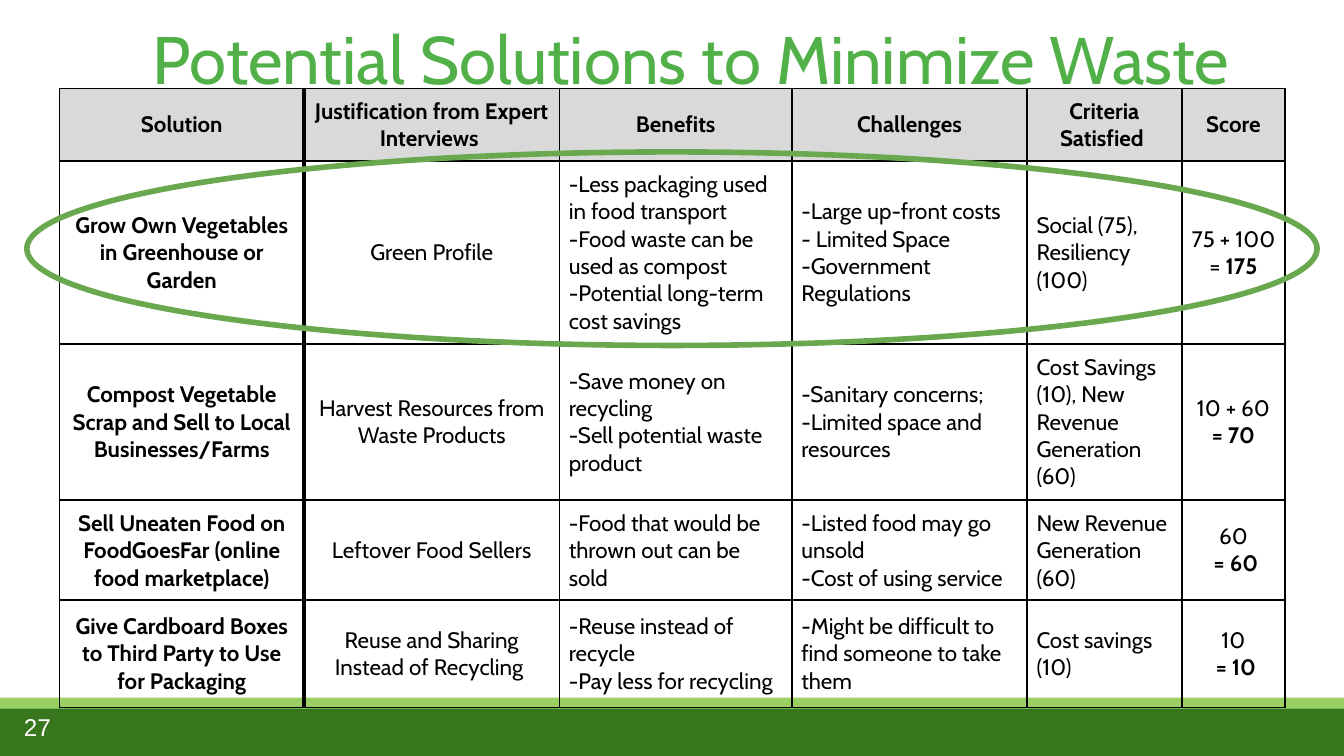
import collections

import pptx
import pptx.dml.color
import pptx.enum.shapes
import pptx.enum.text
import pptx.oxml
import pptx.oxml.ns
import pptx.util

Box = collections.namedtuple("Box", "left top width height")
SLIDE = Box(0, 0, pptx.util.Inches(10), pptx.util.Inches(10 * 9 / 16))
ALIGN = pptx.enum.text.PP_ALIGN
ANCHOR = pptx.enum.text.MSO_ANCHOR
SHAPE = pptx.enum.shapes.MSO_SHAPE

COLUMN_SHARES = [1.82, 1.9, 1.73, 1.75, 1.15, 0.77]
ROW_SHARES = [0.54, 1.36, 1.16, 0.74, 0.8]
LEFT_ALIGNED = {2, 3, 4}
HEADINGS = ["Solution", "Justification from Expert Interviews ", "Benefits",
            "Challenges", "Criteria Satisfied ", "Score"]
SOLUTIONS = [
    ["Grow Own Vegetables in Greenhouse or Garden", "Green Profile",
     "-Less packaging used in food transport\n-Food waste can be used as compost\n"
     "-Potential long-term cost savings",
     "-Large up-front costs\n- Limited Space\n-Government Regulations",
     "Social (75), Resiliency (100)", "75 + 100 \n= |175"],
    ["Compost Vegetable Scrap and Sell to Local Businesses/Farms",
     "Harvest Resources from Waste Products",
     "-Save money on recycling\n-Sell potential waste product",
     "-Sanitary concerns; -Limited space and resources",
     "Cost Savings (10), New Revenue Generation (60)", "10 + 60\n|= 70"],
    ["Sell Uneaten Food on FoodGoesFar (online food marketplace)",
     "Leftover Food Sellers",
     "-Food that would be thrown out can be sold",
     "-Listed food may go unsold\n-Cost of using service",
     "New Revenue Generation (60)", "60\n| = 60"],
    ["Give Cardboard Boxes to Third Party to Use for Packaging",
     "Reuse and Sharing Instead of Recycling ",
     "-Reuse instead of recycle\n-Pay less for recycling",
     "-Might be difficult to find someone to take them",
     "Cost savings (10)", "10\n| = 10"],
]


def color(code):
    """Turn a hex string into a colour."""
    return pptx.dml.color.RGBColor.from_string(code)


def part(box, left, top, width, height):
    """Return the part of a box given by shares of its size."""
    return Box(int(box.left + left * box.width), int(box.top + top * box.height),
               int(width * box.width), int(height * box.height))


def add_run(paragraph, words, size, font, code, bold=False):
    """Append one formatted run to a paragraph."""
    run = paragraph.add_run()
    run.text = words
    run.font.size, run.font.name, run.font.bold = pptx.util.Pt(size), font, bold
    run.font.color.rgb = color(code)


def add_label(slide, box, words, size, font, code, align, anchor):
    """Place one line of text in a box."""
    frame = slide.shapes.add_textbox(*box).text_frame
    frame.word_wrap = True
    frame.vertical_anchor = anchor
    frame.margin_left = frame.margin_right = pptx.util.Inches(0.1)
    frame.margin_top = frame.margin_bottom = pptx.util.Inches(0.1)
    frame.paragraphs[0].alignment = align
    add_run(frame.paragraphs[0], words, size, font, code)


def add_outline(slide, kind, box, fill=None, line=None, weight=0.75):
    """Place a preset shape with an optional fill and line."""
    shape = slide.shapes.add_shape(kind, *box)
    shape.shadow.inherit = False
    for paint, code in ((shape.fill, fill), (shape.line.fill, line)):
        if code:
            paint.solid()
            paint.fore_color.rgb = color(code)
        else:
            paint.background()
    if line:
        shape.line.width = pptx.util.Pt(weight)


def add_footer(slide, box):
    """Draw the two green bands across the foot of the slide."""
    add_outline(slide, SHAPE.RECTANGLE, part(box, 0, 0.13, 1, 0.87), "38761D", "51B148")
    add_outline(slide, SHAPE.RECTANGLE, part(box, 0, 0, 1, 0.13), "9BCF63")


def set_borders(cell, weights):
    """Draw black borders of the given weights, in points, on a cell."""
    properties = cell._tc.get_or_add_tcPr()
    for side, weight in zip("LRTB", weights):
        properties.append(pptx.oxml.parse_xml(
            f'<a:ln{side} {pptx.oxml.ns.nsdecls("a")} w="{pptx.util.Pt(weight)}">'
            f'<a:solidFill><a:srgbClr val="000000"/></a:solidFill></a:ln{side}>'))


def fill_cell(cell, words, row, column):
    """Write and style one cell according to its row and column."""
    set_borders(cell, (2.25 if column == 1 else 1, 2.25 if column == 0 else 1, 1, 1))
    if row == 0:
        cell.fill.solid()
        cell.fill.fore_color.rgb = color("D9D9D9")
    else:
        cell.fill.background()
    cell.vertical_anchor = ANCHOR.MIDDLE
    cell.margin_left = cell.margin_right = pptx.util.Inches(0.07)
    cell.margin_top = cell.margin_bottom = pptx.util.Inches(0.07)
    heading = row == 0 or column == 0
    left = row > 0 and column in LEFT_ALIGNED
    frame = cell.text_frame
    for index, line in enumerate(words.split("\n")):
        paragraph = frame.add_paragraph() if index else frame.paragraphs[0]
        paragraph.alignment = ALIGN.LEFT if left else ALIGN.CENTER
        plain, _, strong = line.partition("|")
        for piece, bold in ((plain, heading), (strong, True)):
            if piece:
                add_run(paragraph, piece, 12, "Cabin", "000000", bold)


def add_solutions(slide, box):
    """Place the table that compares and scores the solutions."""
    rows = [HEADINGS] + SOLUTIONS
    table = slide.shapes.add_table(len(rows), len(HEADINGS), *box).table
    table.first_row = table.horz_banding = False
    for column, share in zip(table.columns, COLUMN_SHARES):
        column.width = int(box.width * share / sum(COLUMN_SHARES))
    for row, share in zip(table.rows, ROW_SHARES):
        row.height = int(box.height * share / sum(ROW_SHARES))
    for r, entries in enumerate(rows):
        for c, words in enumerate(entries):
            fill_cell(table.cell(r, c), words, r, c)


def main():
    """Build and save the slide."""
    deck = pptx.Presentation()
    deck.slide_width, deck.slide_height = SLIDE.width, SLIDE.height
    slide = deck.slides.add_slide(deck.slide_layouts[6])
    add_footer(slide, part(SLIDE, -0.013, 0.923, 1.02, 0.109))
    add_label(slide, part(SLIDE, 0.101, 0.005, 0.826, 0.22),
              "Potential Solutions to Minimize Waste", 36, "Cabin", "51B148",
              ALIGN.CENTER, ANCHOR.TOP)
    add_solutions(slide, part(SLIDE, 0.0443, 0.117, 0.912, 0.819))
    add_outline(slide, SHAPE.OVAL, part(SLIDE, 0.02, 0.201, 0.96, 0.256),
                line="6AA84F", weight=3)
    add_label(slide, part(SLIDE, 0.008, 0.923, 0.06, 0.077), "27", 13, "Arial", "FFFFFF",
              ALIGN.LEFT, ANCHOR.MIDDLE)
    deck.save("out.pptx")


if __name__ == "__main__":
    main()
